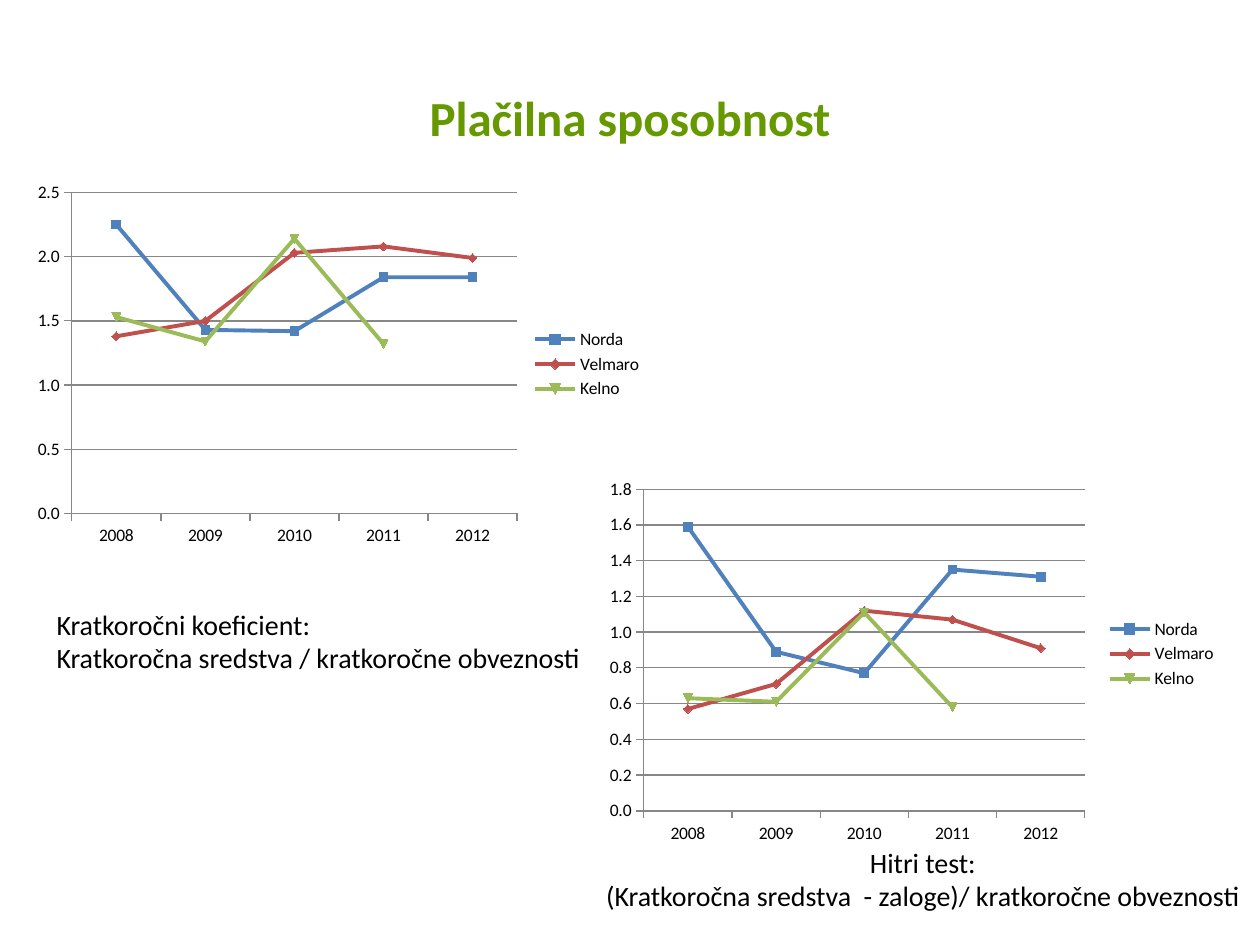
from lxml import etree
from pptx import Presentation
from pptx.chart.data import CategoryChartData
from pptx.dml.color import RGBColor
from pptx.enum.chart import XL_CHART_TYPE, XL_LEGEND_POSITION, XL_TICK_MARK
from pptx.enum.text import MSO_ANCHOR, MSO_AUTO_SIZE, PP_ALIGN
from pptx.oxml.ns import qn
from pptx.util import Inches, Pt

LINE_MARKERS = XL_CHART_TYPE.LINE_MARKERS
LEGEND_RIGHT = XL_LEGEND_POSITION.RIGHT
TICK_OUTSIDE = XL_TICK_MARK.OUTSIDE
LEFT, CENTER = PP_ALIGN.LEFT, PP_ALIGN.CENTER
MIDDLE = MSO_ANCHOR.MIDDLE
GROW = MSO_AUTO_SIZE.SHAPE_TO_FIT_TEXT

FONT = "Calibri"
COLORS = {"title": "669900", "text": "000000", "axis": "878787",
          "Norda": "4F81BD", "Velmaro": "C0504D", "Kelno": "9BBB59"}
YEARS = ["2008", "2009", "2010", "2011", "2012"]
CURRENT_RATIO = {"Norda": [2.25, 1.43, 1.42, 1.84, 1.84],
                 "Velmaro": [1.38, 1.5, 2.03, 2.08, 1.99],
                 "Kelno": [1.53, 1.34, 2.14, 1.32, None]}
QUICK_RATIO = {"Norda": [1.59, 0.89, 0.77, 1.35, 1.31],
               "Velmaro": [0.57, 0.71, 1.12, 1.07, 0.91],
               "Kelno": [0.63, 0.61, 1.11, 0.58, None]}


def rgb(name):
    """Return the named colour."""
    return RGBColor.from_string(COLORS[name])


def write_text(frame, lines, size=16, color="text", bold=False, align=LEFT):
    """Fill a text frame with one formatted paragraph per line."""
    frame.word_wrap = True
    for index, line in enumerate(lines):
        paragraph = frame.add_paragraph() if index else frame.paragraphs[0]
        paragraph.alignment = align
        run = paragraph.add_run()
        run.text = line
        run.font.name = FONT
        run.font.size = Pt(size)
        run.font.bold = bold
        run.font.color.rgb = rgb(color)


def add_title(slide, text):
    """Place and fill the title placeholder."""
    title = slide.shapes.title
    title.left, title.top = Inches(0.5), Inches(0.3)
    title.width, title.height = Inches(9), Inches(1.25)
    title.text_frame.vertical_anchor = MIDDLE
    write_text(title.text_frame, [text], size=28, color="title", bold=True,
               align=CENTER)


def add_formula(slide, bounds, lines, align=LEFT):
    """Add a text box that explains a ratio."""
    frame = slide.shapes.add_textbox(*map(Inches, bounds)).text_frame
    write_text(frame, lines, align=align)
    frame.auto_size = GROW


def set_plot_area(chart, area):
    """Fix the inner plot area as fractions of the chart."""
    plot_area = chart._chartSpace.chart.plotArea
    for layout in plot_area.findall(qn("c:layout")):
        plot_area.remove(layout)
    layout = etree.Element(qn("c:layout"))
    manual = etree.SubElement(layout, qn("c:manualLayout"))
    settings = [("layoutTarget", "inner"), ("xMode", "edge"), ("yMode", "edge"),
                *zip("xywh", area)]
    for tag, value in settings:
        etree.SubElement(manual, qn(f"c:{tag}")).set("val", str(value))
    plot_area.insert(0, layout)


def style_axis(axis):
    """Give an axis its line and tick marks."""
    axis.major_tick_mark = TICK_OUTSIDE
    axis.format.line.color.rgb = rgb("axis")
    axis.format.line.width = Pt(0.75)


def add_ratio_chart(slide, bounds, ratios, top_value, step, plot_area=None):
    """Add a line chart with one series per company."""
    data = CategoryChartData(number_format="0.0")
    data.categories = YEARS
    for company, values in ratios.items():
        data.add_series(company, values)
    chart = slide.shapes.add_chart(LINE_MARKERS, *map(Inches, bounds), data).chart
    chart.has_title = False
    chart.font.name = FONT
    chart.font.size = Pt(10)
    chart.font.color.rgb = rgb("text")
    chart.has_legend = True
    chart.legend.position = LEGEND_RIGHT
    chart.legend.include_in_layout = False

    style_axis(chart.category_axis)
    values_axis = chart.value_axis
    style_axis(values_axis)
    values_axis.minimum_scale = 0
    values_axis.maximum_scale = top_value
    values_axis.major_unit = step
    values_axis.tick_labels.number_format = "0.0"
    values_axis.tick_labels.number_format_is_linked = False
    values_axis.major_gridlines.format.line.color.rgb = rgb("axis")
    values_axis.major_gridlines.format.line.width = Pt(0.75)

    for series in chart.plots[0].series:
        series.smooth = False
        series.format.line.color.rgb = rgb(series.name)
        series.format.line.width = Pt(2.25)
    if plot_area:
        set_plot_area(chart, plot_area)


def main():
    """Build the solvency slide."""
    deck = Presentation()
    deck.slide_width, deck.slide_height = Inches(10), Inches(7.5)
    slide = deck.slides.add_slide(deck.slide_layouts[5])
    add_title(slide, "Plačilna sposobnost")
    add_formula(slide, (0.35, 4.77, 4.65, 0.64),
                ["Kratkoročni koeficient:",
                 "Kratkoročna sredstva / kratkoročne obveznosti"])
    add_formula(slide, (4.45, 6.66, 5.75, 0.64),
                ["Hitri test:",
                 "(Kratkoročna sredstva  - zaloge)/ kratkoročne obveznosti"],
                align=CENTER)
    add_ratio_chart(slide, (0.2, 1.39, 5, 3), CURRENT_RATIO, 2.5, 0.5)
    add_ratio_chart(slide, (4.76, 3.67, 5, 3.04), QUICK_RATIO, 1.8, 0.2,
                    plot_area=(0.07, 0.07, 0.7, 0.84))
    deck.save("out.pptx")


if __name__ == "__main__":
    main()
